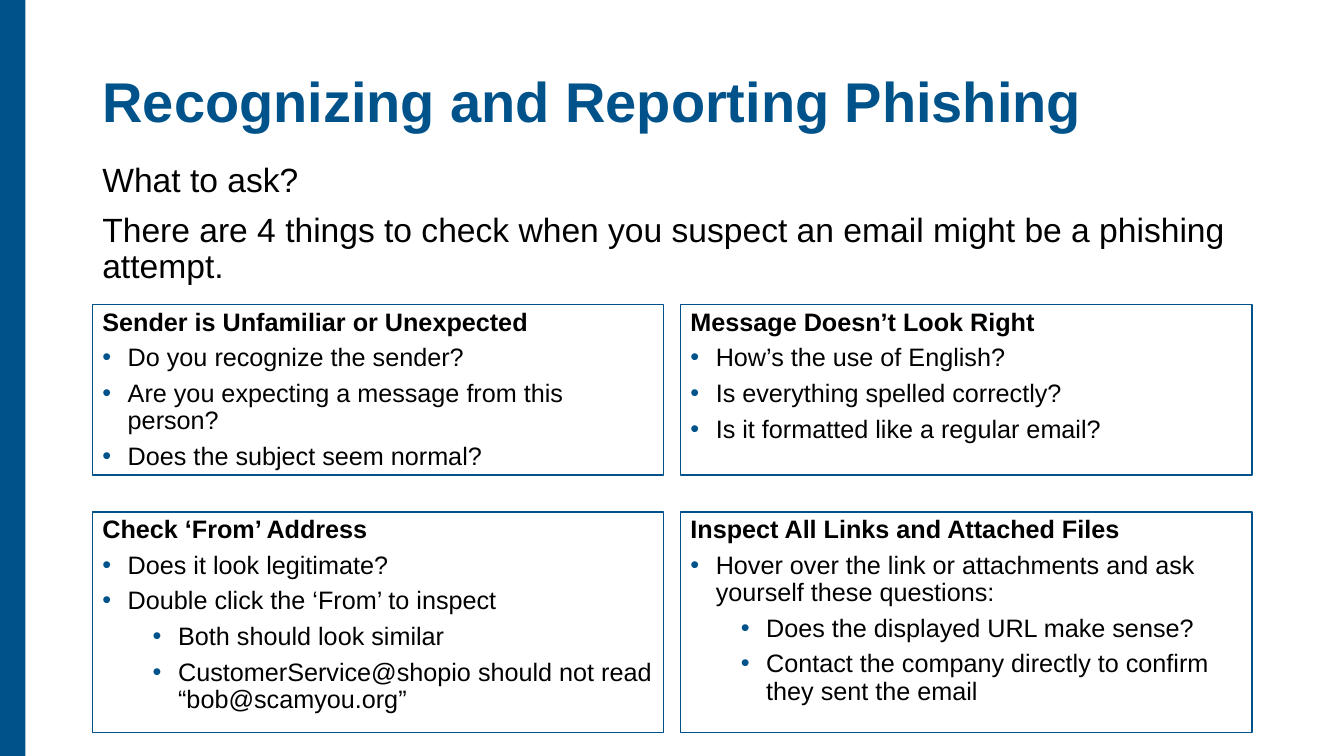
from lxml.etree import SubElement
from pptx import Presentation
from pptx.dml.color import RGBColor
from pptx.enum.shapes import MSO_SHAPE as Shape
from pptx.enum.text import MSO_ANCHOR as Anchor, MSO_AUTO_SIZE as AutoSize, PP_ALIGN as Align
from pptx.oxml.ns import qn
from pptx.util import Cm, Pt

BLUE = RGBColor(0x00, 0x53, 0x8A)
WHITE = RGBColor(0xFF, 0xFF, 0xFF)
BLACK = RGBColor(0x00, 0x00, 0x00)
FONT = "Arial"

SLIDE_W, SLIDE_H = 33.87, 19.05
MARGIN = 2.33
CARD_W, CARD_GAP = 14.4, 0.42
CARD_ROWS = [(7.67, 4.3), (12.9, 5.56)]  # top and height of each row
INDENT, LEVEL_STEP = 0.64, 1.27

# Heading of each card, then its points as (level, wording)
CHECKS = [
    ("Sender is Unfamiliar or Unexpected", [
        (0, "Do you recognize the sender?"),
        (0, "Are you expecting a message from this person?"),
        (0, "Does the subject seem normal?")]),
    ("Message Doesn’t Look Right", [
        (0, "How’s the use of English?"),
        (0, "Is everything spelled correctly?"),
        (0, "Is it formatted like a regular email?")]),
    ("Check ‘From’ Address", [
        (0, "Does it look legitimate?"),
        (0, "Double click the ‘From’ to inspect"),
        (1, "Both should look similar"),
        (1, "CustomerService@shopio should not read “bob@scamyou.org”")]),
    ("Inspect All Links and Attached Files", [
        (0, "Hover over the link or attachments and ask yourself these questions:"),
        (1, "Does the displayed URL make sense?"),
        (1, "Contact the company directly to confirm they sent the email")]),
]
INTRO = [
    "What to ask?",
    "There are 4 things to check when you suspect an email might be a phishing attempt.",
]


def add_bullet(paragraph, level):
    paragraph.level = level
    props = paragraph._p.get_or_add_pPr()
    props.set("marL", str(Cm(INDENT + level * LEVEL_STEP)))
    props.set("indent", str(-Cm(INDENT)))
    colour = SubElement(props, qn("a:buClr"))
    SubElement(colour, qn("a:srgbClr"), val=str(BLUE))
    SubElement(props, qn("a:buFont"), typeface=FONT)
    SubElement(props, qn("a:buChar"), char="•")


def write(frame, wording, size, colour=BLACK, bold=False, before=0, bullet_level=None):
    """Fill the frame's empty first paragraph, or append a new one."""
    first = frame.paragraphs[0]
    paragraph = frame.add_paragraph() if first.runs else first
    if bullet_level is not None:
        add_bullet(paragraph, bullet_level)
    paragraph.alignment = Align.LEFT
    paragraph.line_spacing = 0.9
    paragraph.space_before = Pt(before)
    run = paragraph.add_run()
    run.text = wording
    run.font.name, run.font.size, run.font.bold = FONT, Pt(size), bold
    run.font.color.rgb = colour


def prepare_frame(shape, anchor):
    frame = shape.text_frame
    frame.word_wrap = True
    frame.auto_size = AutoSize.NONE
    frame.vertical_anchor = anchor
    return frame


def add_panel(slide, left, top, width, height, fill):
    panel = slide.shapes.add_shape(Shape.RECTANGLE, Cm(left), Cm(top), Cm(width), Cm(height))
    panel.shadow.inherit = False
    panel.fill.solid()
    panel.fill.fore_color.rgb = fill
    panel.line.color.rgb = BLUE
    panel.line.width = Pt(1)
    return panel


def add_side_bar(slide, left, top, width, height):
    bar = add_panel(slide, left, top, width, height, BLUE)
    bar.line.fill.background()


def place_title(slide, left, top, width, height):
    title = slide.shapes.title
    title.left, title.top, title.width, title.height = map(Cm, (left, top, width, height))
    frame = prepare_frame(title, Anchor.BOTTOM)
    write(frame, "Recognizing and Reporting Phishing", 40, BLUE, bold=True)


def add_card(slide, left, top, width, height, heading, points):
    card = add_panel(slide, left, top, width, height, WHITE)
    frame = prepare_frame(card, Anchor.TOP)
    write(frame, heading, 18, bold=True)
    for level, point in points:
        write(frame, point, 18, before=6, bullet_level=level)


def add_check_grid(slide, left):
    for index, (heading, points) in enumerate(CHECKS):
        row, column = divmod(index, 2)
        top, height = CARD_ROWS[row]
        add_card(slide, left + column * (CARD_W + CARD_GAP), top, CARD_W, height,
                 heading, points)


def add_intro(slide, left, top, width, height):
    intro = slide.shapes.add_textbox(Cm(left), Cm(top), Cm(width), Cm(height))
    frame = prepare_frame(intro, Anchor.TOP)
    for index, sentence in enumerate(INTRO):
        write(frame, sentence, 24, before=10 if index else 0)


def main():
    deck = Presentation()
    deck.slide_width, deck.slide_height = Cm(SLIDE_W), Cm(SLIDE_H)
    slide = deck.slides.add_slide(deck.slide_layouts[5])  # title only

    add_side_bar(slide, 0, 0, 0.64, SLIDE_H)
    place_title(slide, MARGIN, 1.02, 25.4, 2.49)
    add_check_grid(slide, MARGIN)
    add_intro(slide, MARGIN, 3.99, 2 * CARD_W + CARD_GAP, 3.96)

    deck.save("out.pptx")


if __name__ == "__main__":
    main()
